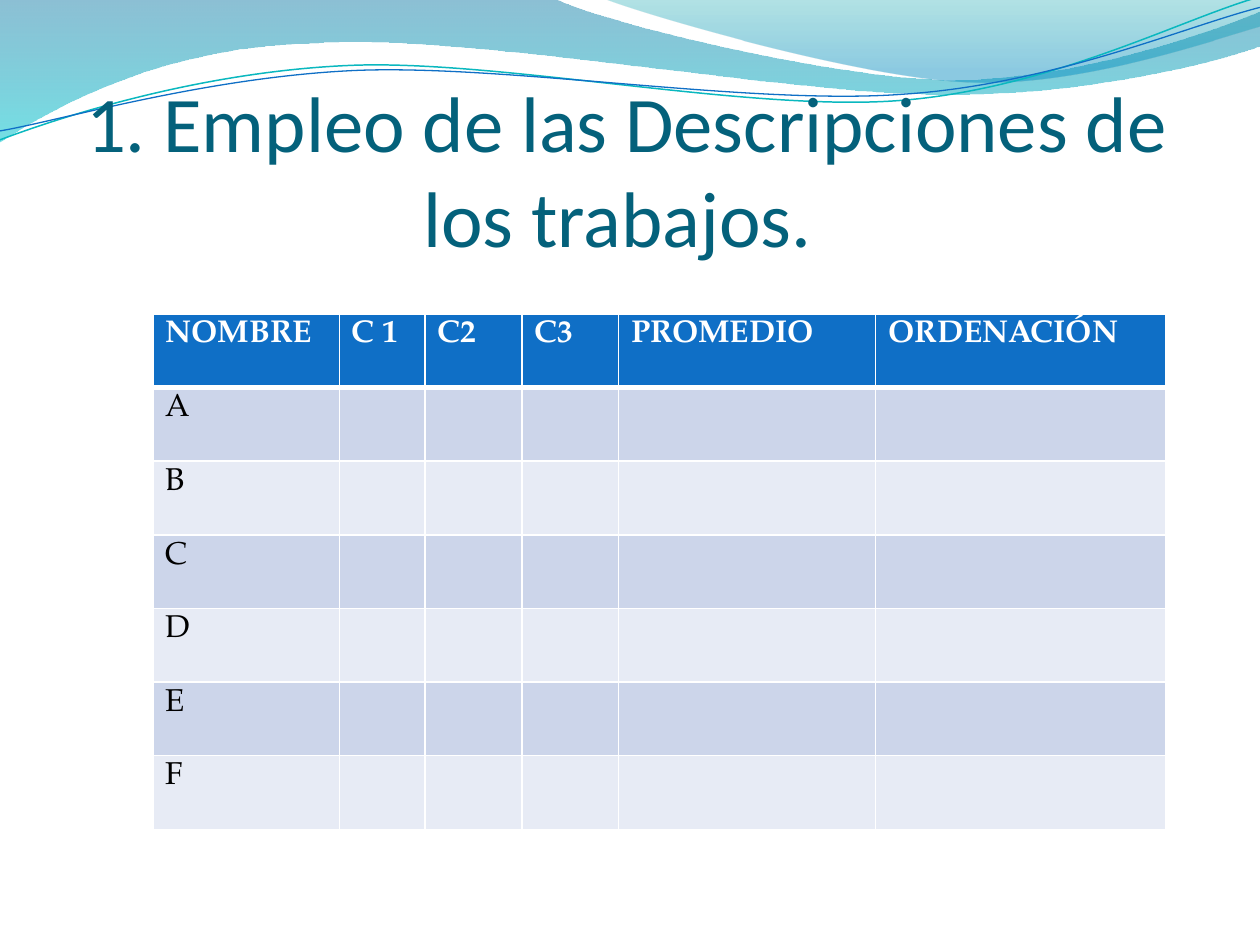
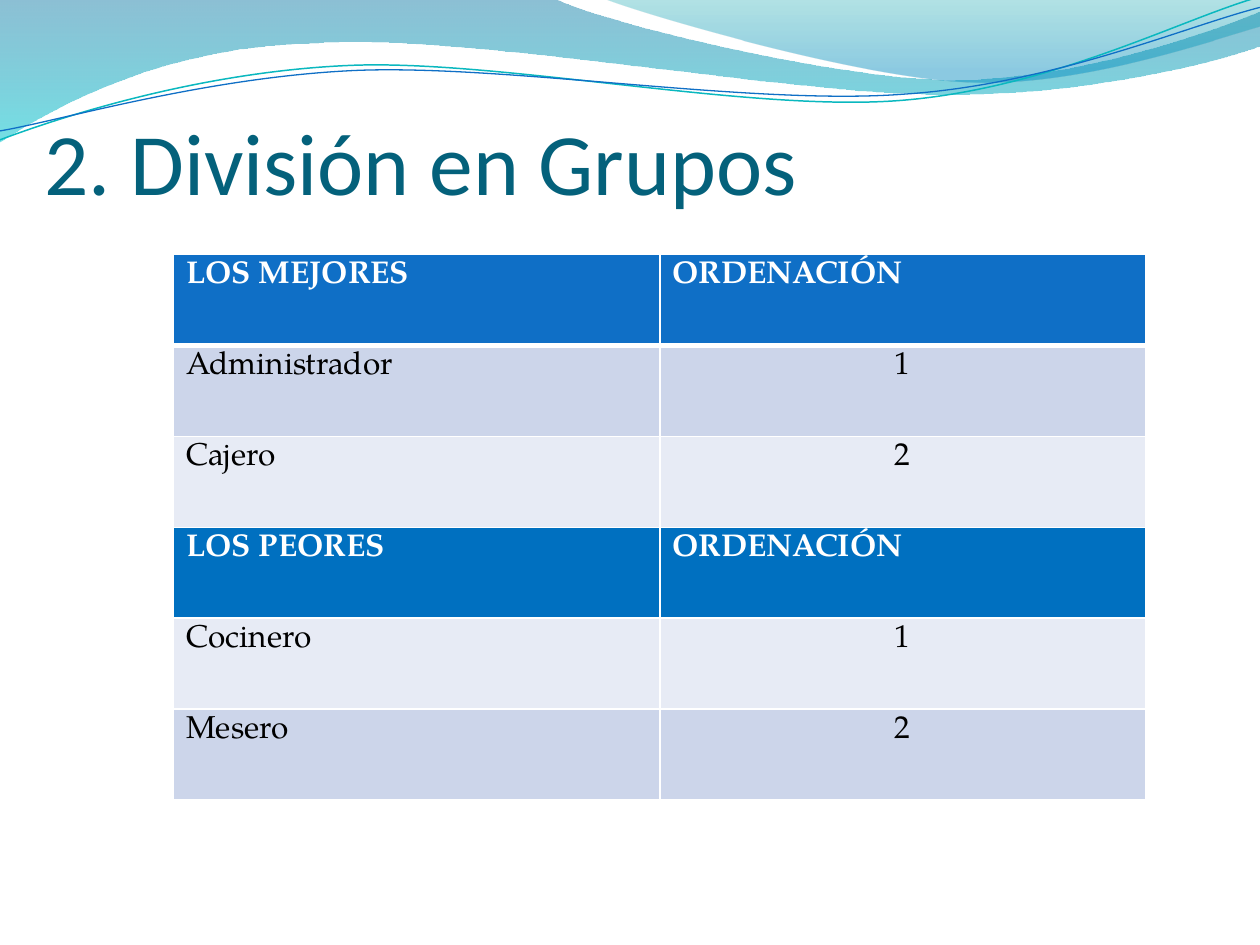
from lxml import etree
from pptx import Presentation
from pptx.dml.color import RGBColor
from pptx.enum import text
from pptx.oxml import ns
from pptx.util import Cm, Pt

WHITE, BLACK, TITLE = "FFFFFF", "000000", "04617B"
HEAD, HEAD2 = "0F6FC6", "0070C0"
BANDS = "E7EBF5", "CCD5EA"
HEAD_FONT, BODY_FONT = "Calibri", "TeX Gyre Pagella"

# Lengths in cm. A one-point step is a line, a three-point step a curve.
WAVES = [
    dict(start=(0, 0), stops=[(0, "0074A1", 45), (100, "00C6CF", 55)], steps=[
        [(11.18, -0.03)],
        [(12.09, 0.43), (16.87, 1.6), (19.25, 1.6)],
        [(21.67, 1.6), (24.33, 0.66), (25.4, 0.23)],
        [(25.43, 0.91)],
        [(24.97, 1.12), (22.1, 1.93), (18.95, 1.9)],
        [(15.8, 1.9), (9.7, 0.71), (6.53, 0.86)],
        [(3.28, 0.91), (1.17, 2.11), (-0.03, 2.87)],
        [(0, 0)]]),
    dict(start=(12.17, -0.03), stops=[(0, "00A1A9", 30), (80, "008BBF", 45)], steps=[
        [(12.93, 0.28), (17.32, 1.57), (19.53, 1.65)],
        [(21.74, 1.75), (24.41, 0.81), (25.4, 0.53)],
        [(25.4, 0)],
        [(12.17, -0.03)]]),
    dict(start=(0, 2.82), line=("0AB8BF", 0.85), steps=[
        [(1.22, 2.36), (4.01, 1.45), (7.04, 1.32)],
        [(10.03, 1.19), (15.06, 2.26), (18.11, 2.03)],
        [(21.16, 1.8), (23.83, 0.38), (25.35, -0.05)]]),
    dict(start=(0, 2.64), line=("0F6FC6", 0.75), steps=[
        [(1.19, 2.44), (4.17, 1.55), (7.19, 1.42)],
        [(10.24, 1.3), (15.16, 2.13), (18.21, 1.9)],
        [(21.23, 1.7), (23.9, 0.53), (25.4, 0.15)]]),
]

SLIDES = [
    dict(title="1. Empleo de las Descripciones de los trabajos. ",
         place=(1.1, 2.12), size=45, align=text.PP_ALIGN.CENTER,
         corner=(3.09, 6.33), cols=[3.75, 1.73, 1.95, 1.95, 5.18, 5.84],
         height=10.39, heads={0: HEAD},
         rows=[["NOMBRE", "C 1", "C2", "C3", "PROMEDIO", "ORDENACIÓN"],
               *([name] + [""] * 5 for name in "ABCDEF")]),
    dict(title="2. División en Grupos",
         place=(0.89, 1.12), size=50, align=text.PP_ALIGN.LEFT,
         corner=(3.5, 5.13), cols=[9.8, 9.8],
         height=11, heads={0: HEAD, 3: HEAD2},
         rows=[["LOS MEJORES", "ORDENACIÓN"],
               ["Administrador", "1"],
               ["Cajero", "2"],
               ["LOS PEORES", "ORDENACIÓN"],
               ["Cocinero", "1"],
               ["Mesero", "2"]]),
]


def rgb(code):
    return RGBColor.from_string(code)


def add(parent, tag, **attrs):
    return etree.SubElement(parent, ns.qn(tag), {k: str(v) for k, v in attrs.items()})


def style(para, font, size, color, bold=False):
    for run in para.runs:
        run.font.name, run.font.size = font, Pt(size)
        run.font.bold, run.font.color.rgb = bold, rgb(color)


def bend(shape, steps):
    """Join the line pieces of each three-point step into one curve."""
    lines = iter(list(shape._element.iter(ns.qn("a:lnTo"))))
    for step in steps:
        parts = [next(lines) for _ in step]
        if len(parts) == 3:
            curve = etree.Element(ns.qn("a:cubicBezTo"))
            parts[0].addprevious(curve)
            for part in parts:
                curve.append(part[0])
                part.getparent().remove(part)


def fade(shape, stops):
    """Fill from top to bottom with see-through colours."""
    shape.fill.background()
    props = shape._element.spPr
    old = props.find(ns.qn("a:noFill"))
    grad = etree.Element(ns.qn("a:gradFill"))
    group = add(grad, "a:gsLst")
    for pos, color, alpha in stops:
        tint = add(add(group, "a:gs", pos=pos * 1000), "a:srgbClr", val=color)
        add(tint, "a:alpha", val=alpha * 1000)
    add(grad, "a:lin", ang=5400000, scaled=0)
    props.replace(old, grad)


def draw_wave(slide, start, steps, stops=None, line=None):
    build = slide.shapes.build_freeform(*map(Cm, start))
    points = [(Cm(x), Cm(y)) for step in steps for x, y in step]
    build.add_line_segments(points, close=bool(stops))
    shape = build.convert_to_shape()
    bend(shape, steps)
    shape.shadow.inherit = False
    if stops:
        fade(shape, stops)
        shape.line.fill.background()
    else:
        shape.fill.background()
        shape.line.color.rgb, shape.line.width = rgb(line[0]), Pt(line[1])
    return shape


def share(shape, master):
    """Move a shape to the master, so that every slide shows it."""
    free = max(item.shape_id for item in master.shapes) + 1
    shape._element.nvSpPr.cNvPr.set("id", str(free))
    master.shapes._spTree.append(shape._element)


def add_title(slide, words, place, size, align):
    frame = slide.shapes.add_textbox(*map(Cm, (*place, 23.06, 3.18))).text_frame
    frame.word_wrap = True
    frame.vertical_anchor = text.MSO_ANCHOR.BOTTOM
    frame.margin_left = frame.margin_right = frame.margin_bottom = 0
    frame.margin_top = Cm(0.13)
    frame.text = words
    para = frame.paragraphs[0]
    para.alignment = align
    style(para, HEAD_FONT, size, TITLE)


def edge(cell, top, bottom):
    """Give the cell white borders; top and bottom are widths in points."""
    props = cell._tc.get_or_add_tcPr()
    for i, (side, width) in enumerate(zip("LRTB", (1, 1, top, bottom))):
        line = etree.Element(ns.qn("a:ln" + side), w=str(Pt(width)))
        add(add(line, "a:solidFill"), "a:srgbClr", val=WHITE)
        props.insert(i, line)


def add_grid(slide, corner, cols, height, rows, heads):
    size = sum(cols), height
    grid = slide.shapes.add_table(len(rows), len(cols), *map(Cm, (*corner, *size))).table
    for col, width in zip(grid.columns, cols):
        col.width = Cm(width)
    for r, row in enumerate(rows):
        for c, words in enumerate(row):
            cell = grid.cell(r, c)
            para = cell.text_frame.paragraphs[0]
            if words:
                para.text = words
            if words.isdigit():
                para.alignment = text.PP_ALIGN.CENTER
            style(para, BODY_FONT, 18, WHITE if r in heads else BLACK, r in heads)
            cell.fill.solid()
            cell.fill.fore_color.rgb = rgb(heads.get(r, BANDS[r % 2]))
            edge(cell, 3 if r == 1 else 1, 3 if r == 0 else 1)


def main():
    deck = Presentation()
    deck.slide_width, deck.slide_height = Cm(25.4), Cm(19.05)
    pages = [deck.slides.add_slide(deck.slide_layouts[6]) for _ in SLIDES]
    for wave in WAVES:
        share(draw_wave(pages[0], **wave), deck.slide_master)
    for slide, page in zip(pages, SLIDES):
        add_title(slide, page["title"], page["place"], page["size"], page["align"])
        add_grid(slide, page["corner"], page["cols"], page["height"],
                 page["rows"], page["heads"])
    deck.save("out.pptx")


if __name__ == "__main__":
    main()
